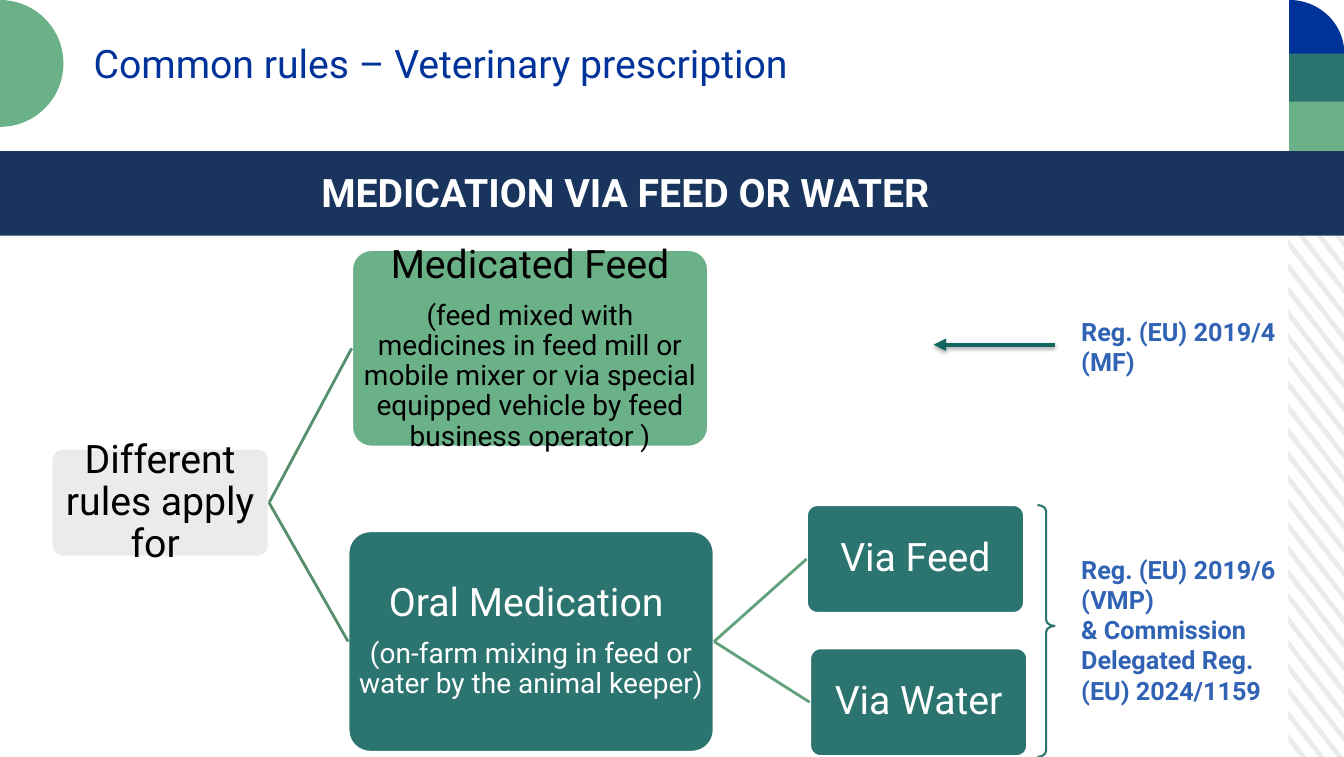
import math
from lxml import etree
from pptx import Presentation
from pptx import util as u
from pptx.dml.color import RGBColor
from pptx.enum import shapes, text
from pptx.oxml import parse_xml
from pptx.oxml.ns import nsdecls, qn

FONT = "Roboto"
WIDTH, HEIGHT = 33.86, 19.08
NAVY, BLUE, TEAL, GREEN = "19355D", "003399", "2C7470", "6BB188"
GREY, WHITE, BLACK, REF = "ECEBEB", "FFFFFF", "000000", "3163B5"

NODES = {
    "rules": ((1.29, 11.3, 5.49, 2.74), GREY, BLACK, [("Different rules apply for ", 28)]),
    "medicated": ((8.86, 6.29, 8.99, 4.98), GREEN, BLACK, [
        ("Medicated Feed", 28),
        ("(feed mixed with medicines in feed mill or mobile mixer or via "
         "special equipped vehicle by feed business operator )", 20)]),
    "oral": ((8.77, 13.38, 9.22, 5.58), TEAL, WHITE, [
        ("Oral Medication ", 28),
        ("(on-farm mixing in feed or water by the animal keeper)", 20)]),
    "feed": ((20.32, 12.72, 5.49, 2.74), TEAL, WHITE, [("Via Feed", 28)]),
    "water": ((20.4, 16.33, 5.49, 2.74), TEAL, WHITE, [("Via Water", 28)]),
}
LINKS = [("rules", "medicated", "568F6E"), ("rules", "oral", "568F6E"),
         ("oral", "feed", "61A27C"), ("oral", "water", "61A27C")]
LABELS = [
    ((5.17, 4.11, 21.16, 1.65), ["MEDICATION VIA FEED OR WATER"], 28, WHITE, True, True),
    ((2.11, 0.86, 22.25, 1.47), ["Common rules – Veterinary prescription"], 28, BLUE, False, False),
    ((26.99, 7.85, 5.82, 1.8), ["Reg. (EU) 2019/4", "(MF)"], 18, REF, True, False),
    ((26.99, 13.84, 5.46, 4.11), ["Reg. (EU) 2019/6 (VMP)",
                                  "& Commission Delegated Reg. (EU) 2024/1159"], 18, REF, True, False),
]
STRIPES = dict(left=32.46, right=33.86, top=3.91, bottom=19.08,
               first=4.24, step=0.594, rise=1.8, thick=0.2)
BANDS = [(1.22, TEAL), (2.56, GREEN)]
BAND_LEFT, BAND_WIDTH, BAND_HEIGHT = 32.48, 1.39, 1.35

prs = Presentation()
prs.slide_width, prs.slide_height = u.Cm(WIDTH), u.Cm(HEIGHT)
s = prs.slides.add_slide(prs.slide_layouts[6])


def color(value):
    return RGBColor.from_string(value)


def paint(sp, fill, line=None, width=2):
    sp.shadow.inherit = False
    if fill:
        sp.fill.solid()
        sp.fill.fore_color.rgb = color(fill)
    else:
        sp.fill.background()
    if line:
        sp.line.color.rgb = color(line)
        sp.line.width = u.Pt(width)
    else:
        sp.line.fill.background()


def add_shape(kind, box, *style):
    sp = s.shapes.add_shape(kind, *[u.Cm(v) for v in box])
    paint(sp, *style)
    return sp


def add_outline(polygons, fill):
    polygons = [[(u.Cm(x), u.Cm(y)) for x, y in points] for points in polygons]
    builder = s.shapes.build_freeform(*polygons[0][0])
    for i, points in enumerate(polygons):
        if i:
            builder.move_to(*points[0])
        builder.add_line_segments(points[1:], close=True)
    paint(builder.convert_to_shape(), fill)


def arc(cx, cy, rx, ry, start, end, count=36):
    angles = [math.radians(start + (end - start) * i / count) for i in range(count + 1)]
    return [(cx + rx * math.cos(a), cy + ry * math.sin(a)) for a in angles]


def stripe_edge(y, left, right, top, bottom, rise):
    ends = [min(max(v, top), bottom) for v in (y, y + rise)]
    return [(left + (right - left) * (v - y) / rise, v) for v in ends]


def stripe_polygons(left, right, top, bottom, first, step, rise, thick):
    for k in range(-3, 25):
        y = first + k * step
        upper, lower = [stripe_edge(v, left, right, top, bottom, rise) for v in (y, y + thick)]
        yield upper + lower[::-1]


def add_run(p, words, size, ink, bold=False):
    r = p.add_run()
    r.text = words
    r.font.name, r.font.size, r.font.bold = FONT, u.Pt(size), bold
    r.font.color.rgb = color(ink)


def paragraphs(tf, items):
    for i, item in enumerate(items):
        yield (tf.add_paragraph() if i else tf.paragraphs[0]), item


def add_node(box, fill, ink, lines):
    sp = add_shape(shapes.MSO_SHAPE.ROUNDED_RECTANGLE, box, fill, WHITE)
    sp.adjustments[0] = 0.1
    tf = sp.text_frame
    tf.word_wrap = True
    tf.vertical_anchor = text.MSO_ANCHOR.MIDDLE
    tf.margin_left = tf.margin_right = tf.margin_top = tf.margin_bottom = u.Cm(0.05)
    for p, (words, size) in paragraphs(tf, lines):
        p.alignment = text.PP_ALIGN.CENTER
        p.line_spacing = 0.9
        p.space_after = u.Pt(10)
        add_run(p, words, size, ink)
    return sp


def add_label(box, lines, size, ink, bold, centred):
    tf = s.shapes.add_textbox(*[u.Cm(v) for v in box]).text_frame
    tf.word_wrap = True
    for p, words in paragraphs(tf, lines):
        p.alignment = text.PP_ALIGN.CENTER if centred else text.PP_ALIGN.LEFT
        add_run(p, words, size, ink, bold)


def add_line(x1, y1, x2, y2, ink, width):
    c = s.shapes.add_connector(shapes.MSO_CONNECTOR.STRAIGHT, *[u.Cm(v) for v in (x1, y1, x2, y2)])
    c.line.color.rgb = color(ink)
    c.line.width = u.Pt(width)
    effects = etree.SubElement(c._element.spPr, qn("a:effectLst"))
    return c, effects


add_outline(list(stripe_polygons(**STRIPES)), GREY)
for top, fill in BANDS:
    add_shape(shapes.MSO_SHAPE.RECTANGLE, (BAND_LEFT, top, BAND_WIDTH, BAND_HEIGHT), fill)
quarter = arc(BAND_LEFT, BAND_HEIGHT, BAND_WIDTH, BAND_HEIGHT, -90, 0)
add_outline([[(BAND_LEFT, BAND_HEIGHT)] + quarter], BLUE)
add_outline([arc(0, 1.6, 1.6, 1.6, -90, 90)], GREEN)
add_shape(shapes.MSO_SHAPE.RECTANGLE, (0, 3.81, WIDTH, 2.13), NAVY)

nodes = {name: add_node(*node) for name, node in NODES.items()}
for start, end, ink in LINKS:
    link, _ = add_line(0, 0, 1, 1, ink, 2)
    link.begin_connect(nodes[start], 3)
    link.end_connect(nodes[end], 1)

for label in LABELS:
    add_label(*label)

arrow, effects = add_line(26.57, 8.69, 23.52, 8.69, "126660", 3)
etree.SubElement(arrow.line._get_or_add_ln(), qn("a:tailEnd"), type="triangle")
effects.append(parse_xml(
    f'<a:outerShdw {nsdecls("a")} blurRad="{u.Pt(3.1)}" dist="{u.Pt(1.8)}" dir="5400000" '
    'rotWithShape="0"><a:srgbClr val="000000"><a:alpha val="35000"/></a:srgbClr></a:outerShdw>'))

brace = add_shape(shapes.MSO_SHAPE.RIGHT_BRACE, (26.14, 12.73, 0.43, 6.35), None, TEAL, 1.5)
brace.adjustments[0], brace.adjustments[1] = 0.36, 0.48

prs.save("out.pptx")
